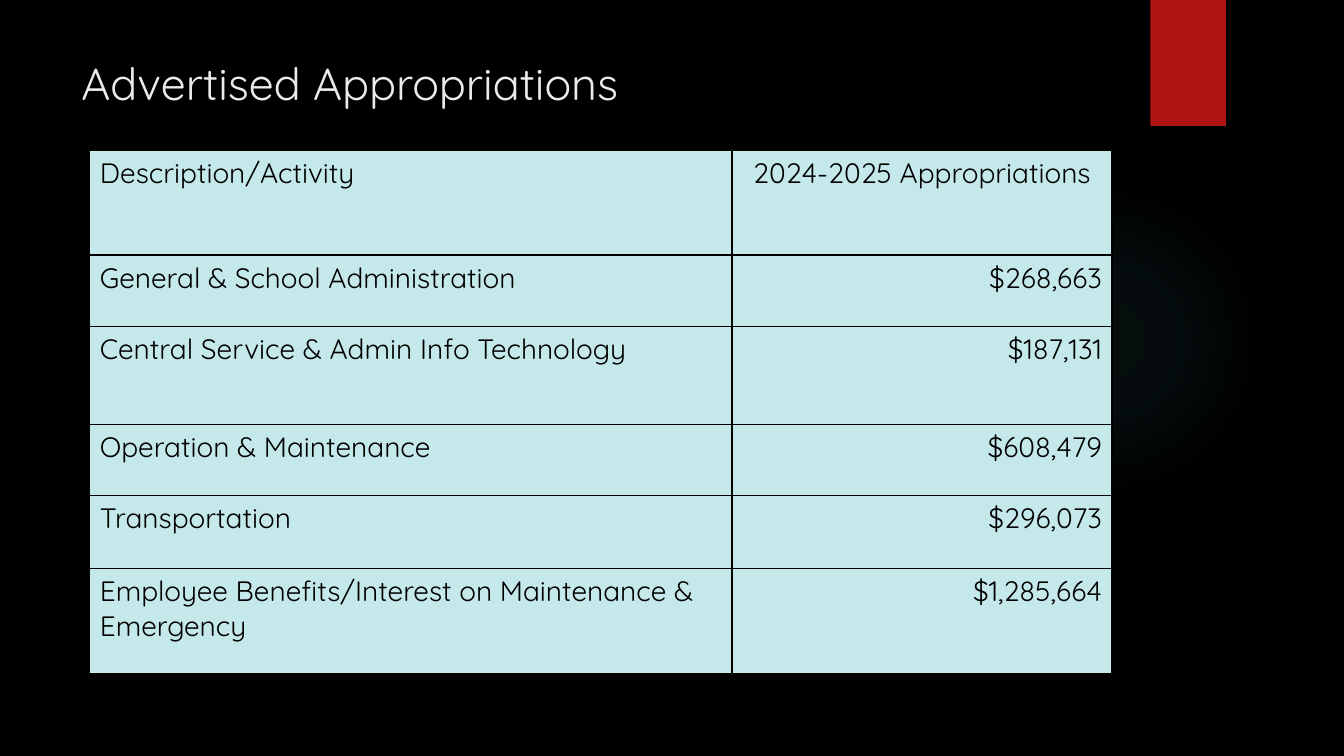
from dataclasses import dataclass

from pptx import Presentation
from pptx.dml.color import RGBColor
from pptx.enum.shapes import MSO_SHAPE
from pptx.enum.text import MSO_ANCHOR, PP_ALIGN
from pptx.oxml import parse_xml
from pptx.oxml.ns import nsdecls
from pptx.util import Inches, Pt


@dataclass(frozen=True)
class Theme:
    font: str = "Quicksand"
    background: str = "000000"
    glow: str = "50B9C1"
    ribbon: str = "B01513"
    title: str = "EBEBEB"
    ink: str = "000000"
    cell: str = "C5E8EA"
    border: str = "000000"
    title_size: int = 32
    cell_size: int = 20
    border_width: int = 1


@dataclass(frozen=True)
class Appropriation:
    activity: str
    amount: str
    height: float
    amount_align: PP_ALIGN = PP_ALIGN.RIGHT


THEME = Theme()
COLUMN_WIDTHS = (6.37, 3.77)
ROWS = (
    Appropriation("Description/Activity", "2024-2025 Appropriations", 1.04, PP_ALIGN.CENTER),
    Appropriation("General & School Administration", "$268,663", 0.71),
    Appropriation("Central Service & Admin Info Technology", "$187,131", 0.97),
    Appropriation("Operation & Maintenance", "$608,479", 0.71),
    Appropriation("Transportation", "$296,073", 0.72),
    Appropriation("Employee Benefits/Interest on Maintenance & Emergency", "$1,285,664", 1.04),
)


def rgb(color: str) -> RGBColor:
    return RGBColor.from_string(color)


def write(tf, text: str, size: int, color: str, align: PP_ALIGN = PP_ALIGN.LEFT) -> None:
    tf.word_wrap = True
    p = tf.paragraphs[0]
    p.alignment = align
    r = p.add_run()
    r.text = text
    r.font.name = THEME.font
    r.font.size = Pt(size)
    r.font.color.rgb = rgb(color)


def add_plain_shape(slide, kind: MSO_SHAPE, left: float, top: float, width: float, height: float):
    sp = slide.shapes.add_shape(kind, Inches(left), Inches(top), Inches(width), Inches(height))
    sp.shadow.inherit = False
    sp.line.fill.background()
    return sp


def add_glow(slide) -> None:
    """Add a circle that fades radially to full transparency."""
    sp = add_plain_shape(slide, MSO_SHAPE.OVAL, 9.41, 1.83, 3.08, 3.08)
    stops = "".join(
        f'<a:gs pos="{position * 1000}"><a:srgbClr val="{THEME.glow}">'
        f'<a:alpha val="{alpha * 1000}"/></a:srgbClr></a:gs>'
        for position, alpha in ((0, 7), (36, 6), (69, 0))
    )
    gradient = parse_xml(
        f'<a:gradFill {nsdecls("a")}><a:gsLst>{stops}</a:gsLst><a:path path="circle">'
        '<a:fillToRect l="50000" t="50000" r="50000" b="50000"/></a:path></a:gradFill>'
    )
    sp.element.spPr.insert(2, gradient)


def add_ribbon(slide) -> None:
    sp = add_plain_shape(slide, MSO_SHAPE.RECTANGLE, 11.41, 0, 0.75, 1.25)
    sp.fill.solid()
    sp.fill.fore_color.rgb = rgb(THEME.ribbon)


def add_title(slide, text: str) -> None:
    box = slide.shapes.add_textbox(Inches(0.71), Inches(0.5), Inches(10.29), Inches(1.53))
    box.text_frame.vertical_anchor = MSO_ANCHOR.TOP
    write(box.text_frame, text, THEME.title_size, THEME.title)


def set_borders(cell) -> None:
    tc_pr = cell._tc.get_or_add_tcPr()
    for i, side in enumerate(("lnL", "lnR", "lnT", "lnB")):
        tc_pr.insert(i, parse_xml(
            f'<a:{side} {nsdecls("a")} w="{Pt(THEME.border_width)}"><a:solidFill>'
            f'<a:srgbClr val="{THEME.border}"/></a:solidFill></a:{side}>'
        ))


def add_appropriations(slide) -> None:
    frame = slide.shapes.add_table(
        len(ROWS), len(COLUMN_WIDTHS), Inches(0.89), Inches(1.49),
        Inches(sum(COLUMN_WIDTHS)), Inches(sum(row.height for row in ROWS)),
    )
    table = frame.table
    table.first_row = False
    table.horz_banding = False
    for column, width in zip(table.columns, COLUMN_WIDTHS):
        column.width = Inches(width)
    for table_row, row in zip(table.rows, ROWS):
        table_row.height = Inches(row.height)
        entries = ((row.activity, PP_ALIGN.LEFT), (row.amount, row.amount_align))
        for cell, (text, align) in zip(table_row.cells, entries):
            cell.fill.solid()
            cell.fill.fore_color.rgb = rgb(THEME.cell)
            set_borders(cell)
            write(cell.text_frame, text, THEME.cell_size, THEME.ink, align)


def main() -> None:
    prs = Presentation()
    prs.slide_width = Inches(13.33)
    prs.slide_height = Inches(7.5)
    slide = prs.slides.add_slide(prs.slide_layouts[6])
    slide.background.fill.solid()
    slide.background.fill.fore_color.rgb = rgb(THEME.background)
    add_glow(slide)
    add_ribbon(slide)
    add_title(slide, "Advertised Appropriations")
    add_appropriations(slide)
    prs.save("out.pptx")


if __name__ == "__main__":
    main()
